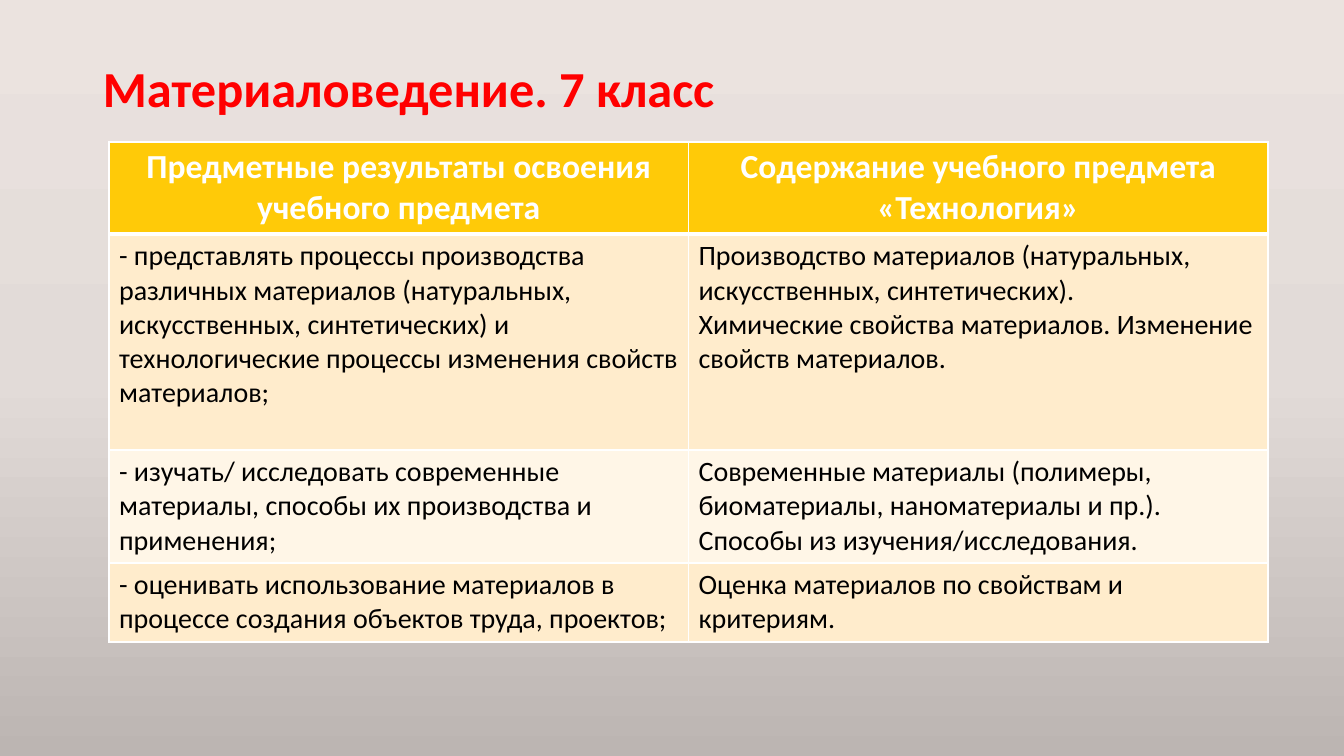
from copy import deepcopy

from lxml.etree import SubElement
from pptx import Presentation
from pptx.dml.color import RGBColor
from pptx.enum.text import MSO_ANCHOR, PP_ALIGN
from pptx.oxml.ns import qn
from pptx.util import Emu, Pt

TITLE = "Материаловедение. 7 класс"
HEADER = [
    ["Предметные результаты освоения учебного предмета"],
    ["Содержание учебного предмета «Технология»"],
]
BODY = [
    [
        ["- представлять процессы производства различных материалов "
         "(натуральных, искусственных, синтетических) и технологические "
         "процессы изменения свойств материалов;"],
        ["Производство материалов (натуральных, искусственных, синтетических).",
         "Химические свойства материалов. Изменение свойств материалов."],
    ],
    [
        ["- изучать/ исследовать современные материалы, способы их "
         "производства и применения;"],
        ["Современные материалы (полимеры, биоматериалы, наноматериалы и пр.).",
         "Способы из изучения/исследования."],
    ],
    [
        ["- оценивать использование материалов в процессе создания объектов "
         "труда, проектов;"],
        ["Оценка материалов по свойствам и критериям."],
    ],
]
ROW_HEIGHTS = [92, 216, 113, 79]


def px(length):
    return Emu(round(length * 914400 / 100.8))


def color(value):
    return RGBColor.from_string(value)


class SlideBuilder:
    font = "Calibri"
    white = "FFFFFF"
    header_fill = "FFCA08"
    band_fills = ["FFECCC", "FFF6E7"]

    def __init__(self, slide):
        self.slide = slide

    def background(self, stops, angle):
        fill = self.slide.background.fill
        fill.gradient()
        fill.gradient_angle = angle
        stop_list = next(self.slide.element.iter(qn("a:gsLst")))
        while len(stop_list) < len(stops):
            stop_list.append(deepcopy(stop_list[0]))
        for stop, (position, value) in zip(fill.gradient_stops, stops):
            stop.position = position
            stop.color.rgb = color(value)

    def text_run(self, paragraph, text, size, value, bold):
        run = paragraph.add_run()
        run.text = text
        run.font.name = self.font
        run.font.size = Pt(size)
        run.font.bold = bold
        run.font.color.rgb = color(value)

    def title(self, text, left, top, width, height):
        shape = self.slide.shapes.add_textbox(px(left), px(top), px(width), px(height))
        frame = shape.text_frame
        frame.word_wrap = True
        frame.vertical_anchor = MSO_ANCHOR.MIDDLE
        paragraph = frame.paragraphs[0]
        paragraph.line_spacing = 0.9
        self.text_run(paragraph, text, 36, "FF0000", True)

    def border(self, cell, side, width):
        properties = cell._tc.get_or_add_tcPr()
        line = SubElement(properties, qn(f"a:ln{side}"), w=str(Pt(width)))
        fill = SubElement(line, qn("a:solidFill"))
        SubElement(fill, qn("a:srgbClr"), val=self.white)

    def cell(self, cell, texts, row):
        is_header = row == 0
        widths = {"L": 1, "R": 1, "T": 3 if row == 1 else 1, "B": 3 if is_header else 1}
        for side, width in widths.items():
            self.border(cell, side, width)
        cell.fill.solid()
        band = self.band_fills[(row - 1) % 2]
        cell.fill.fore_color.rgb = color(self.header_fill if is_header else band)
        frame = cell.text_frame
        for index, text in enumerate(texts):
            paragraph = frame.add_paragraph() if index else frame.paragraphs[0]
            paragraph.alignment = PP_ALIGN.CENTER if is_header else PP_ALIGN.LEFT
            if is_header:
                self.text_run(paragraph, text, 24, self.white, True)
            else:
                self.text_run(paragraph, text, 20, "000000", False)

    def table(self, rows, heights, left, top, width):
        shape = self.slide.shapes.add_table(
            len(rows), len(rows[0]), px(left), px(top), px(width), px(sum(heights)))
        table = shape.table
        for row, (texts, height) in enumerate(zip(rows, heights)):
            table.rows[row].height = px(height)
            for column, paragraphs in enumerate(texts):
                self.cell(table.cell(row, column), paragraphs, row)


def main():
    presentation = Presentation()
    presentation.slide_width = px(1344)
    presentation.slide_height = px(756)
    slide = presentation.slides.add_slide(presentation.slide_layouts[6])
    builder = SlideBuilder(slide)
    builder.background([(0, "EBE3DF"), (0.5, "E2DBD8"), (1, "BCB5B2")], 270)
    builder.title(TITLE, 93, 40, 1159, 102)
    builder.table([HEADER] + BODY, ROW_HEIGHTS, 109, 142, 1159)
    presentation.save("out.pptx")


if __name__ == "__main__":
    main()
